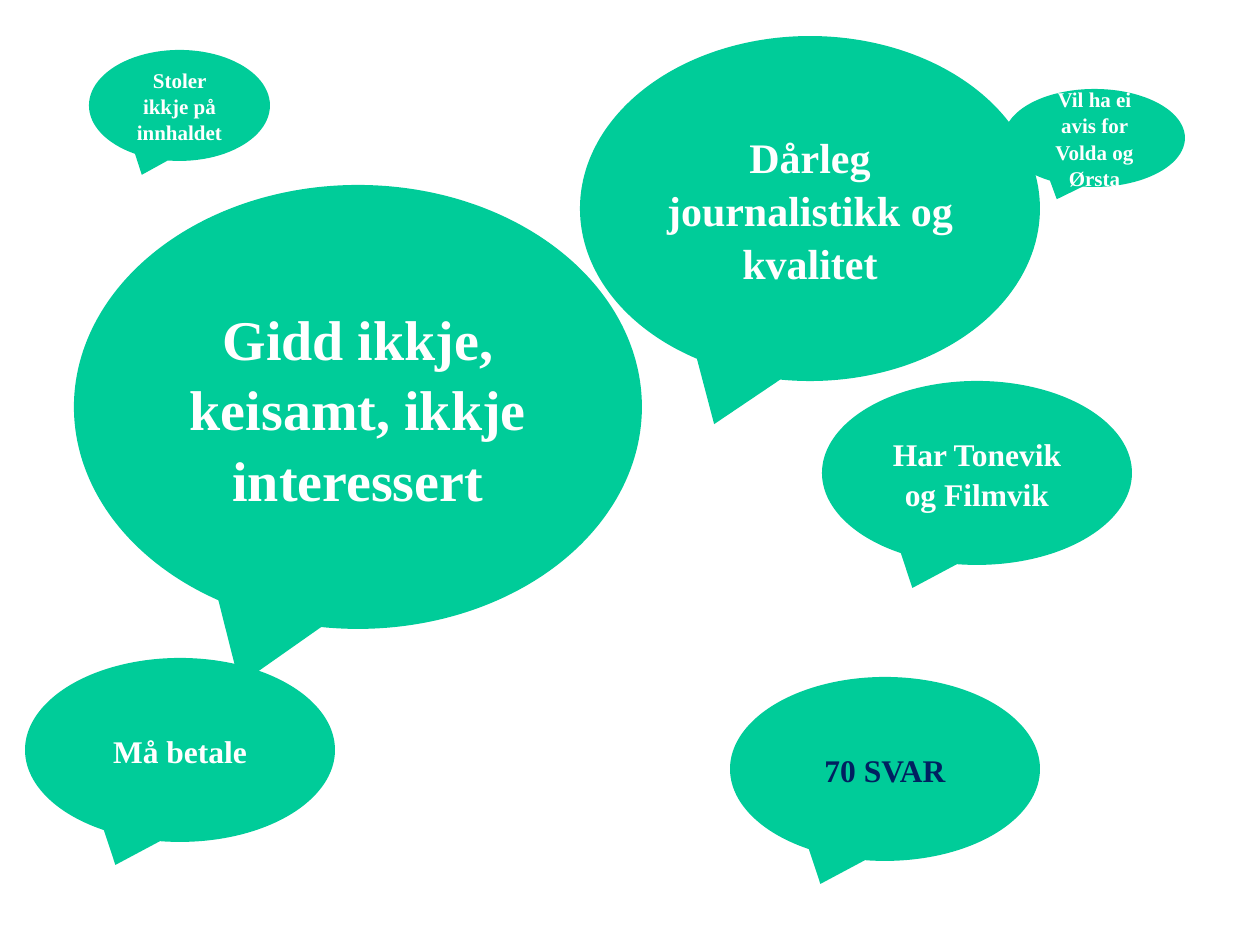
from dataclasses import dataclass

from pptx import Presentation
from pptx.dml.color import RGBColor
from pptx.enum.shapes import MSO_SHAPE
from pptx.enum.text import MSO_ANCHOR, PP_ALIGN
from pptx.util import Emu, Pt

CALLOUT = MSO_SHAPE.OVAL_CALLOUT
MIDDLE = MSO_ANCHOR.MIDDLE
CENTER = PP_ALIGN.CENTER
PX = 914400 / 126


def px(length):
    return Emu(round(length * PX))


@dataclass(frozen=True)
class Theme:
    font: str = "Times New Roman"
    bubble: RGBColor = RGBColor(0x00, 0xCC, 0x99)
    light: RGBColor = RGBColor(0xFF, 0xFF, 0xFF)
    dark: RGBColor = RGBColor(0x00, 0x20, 0x60)
    small: int = 12
    medium: int = 18
    large: int = 24
    huge: int = 32
    line_spacing: float = 1.05


class SlideBuilder:
    def __init__(self, slide, theme):
        self.slide = slide
        self.theme = theme

    def bubble(self, text, left, top, width, height, size, color):
        box = self.slide.shapes.add_shape(
            CALLOUT, px(left), px(top), px(width), px(height))
        box.shadow.inherit = False
        box.fill.solid()
        box.fill.fore_color.rgb = self.theme.bubble
        box.line.fill.background()
        frame = box.text_frame
        frame.word_wrap = True
        frame.vertical_anchor = MIDDLE
        para = frame.paragraphs[0]
        para.text = text
        para.alignment = CENTER
        para.line_spacing = self.theme.line_spacing
        para.font.name = self.theme.font
        para.font.size = Pt(size)
        para.font.bold = True
        para.font.color.rgb = color


def main():
    theme = Theme()
    deck = Presentation()
    deck.slide_width, deck.slide_height = px(1260), px(945)
    page = SlideBuilder(deck.slides.add_slide(deck.slide_layouts[6]), theme)

    medium_bubble = (310, 184, theme.medium)
    answers = [
        ("Stoler ikkje på innhaldet", 89, 50, 181, 111, theme.small),
        ("Gidd ikkje, keisamt, ikkje interessert", 74, 185, 568, 444, theme.huge),
        ("Må betale", 25, 658, *medium_bubble),
        ("Vil ha ei avis for Volda og Ørsta", 1004, 89, 181, 98, theme.small),
        ("Dårleg journalistikk og kvalitet", 580, 36, 460, 345, theme.large),
        ("Har Tonevik og Filmvik", 822, 381, *medium_bubble),
    ]
    for answer in answers:
        page.bubble(*answer, theme.light)
    page.bubble("70 SVAR", 730, 677, *medium_bubble, theme.dark)

    deck.save("out.pptx")


if __name__ == "__main__":
    main()
